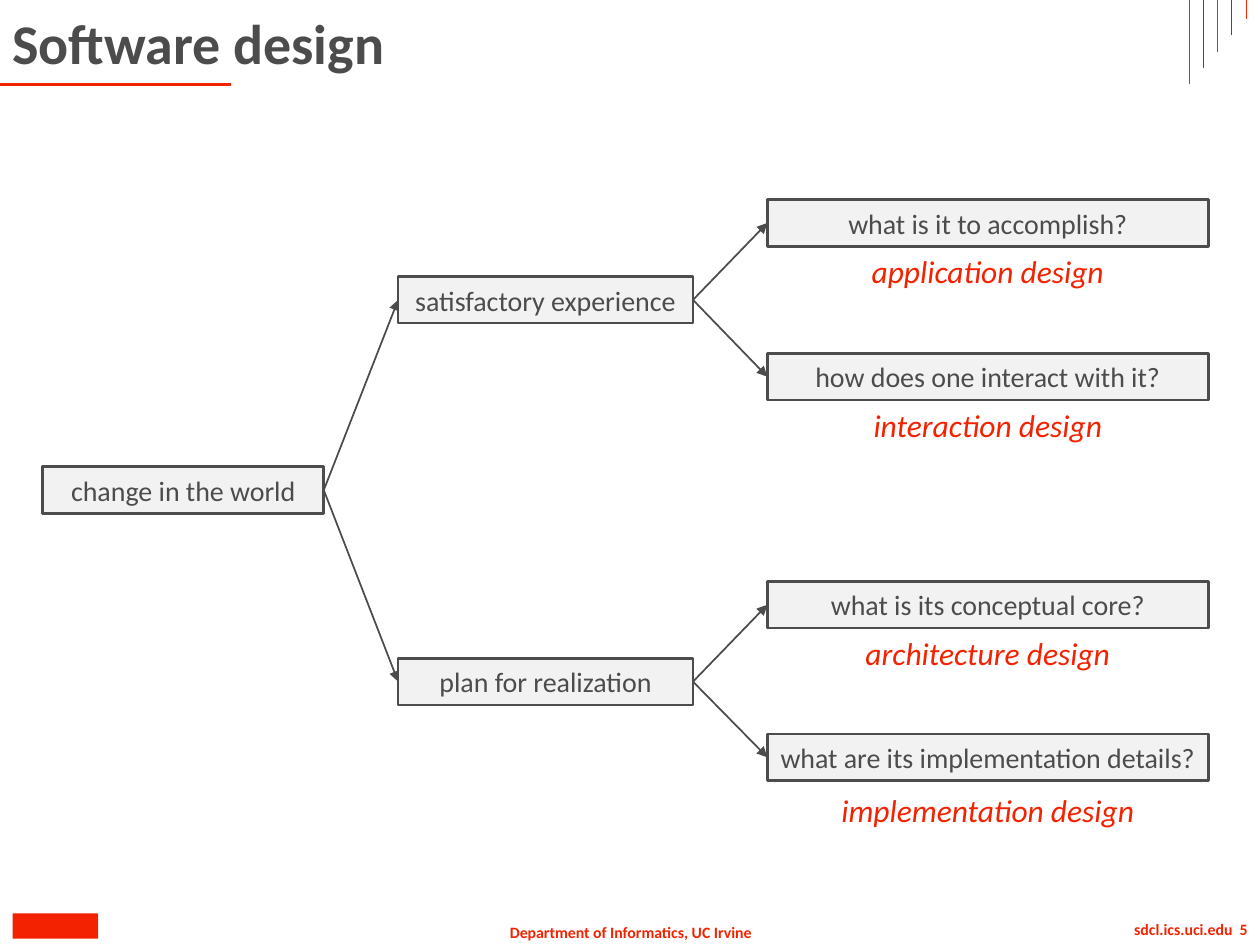
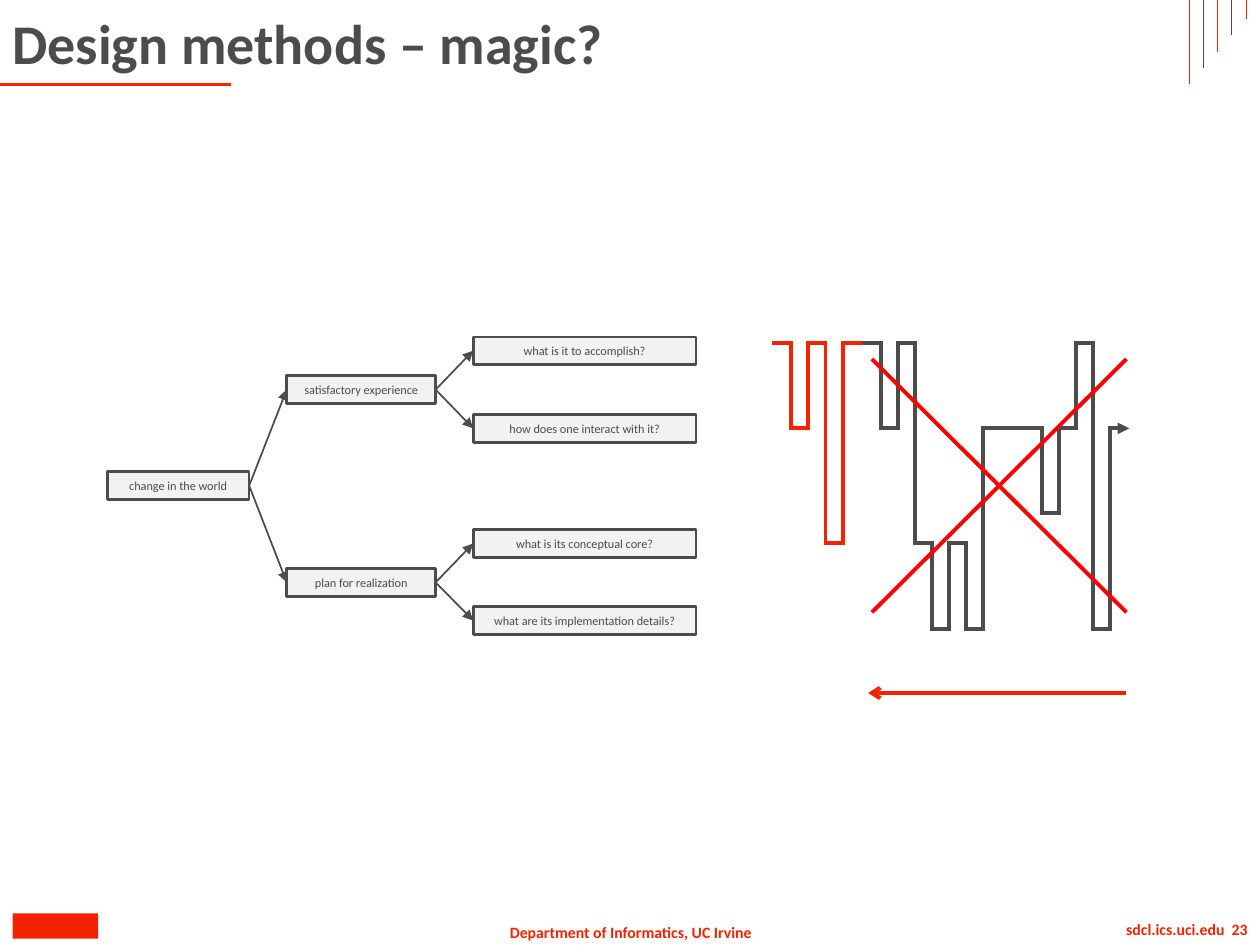
from dataclasses import dataclass

from lxml.etree import SubElement
from pptx import Presentation
from pptx.dml.color import RGBColor
from pptx.enum.shapes import MSO_CONNECTOR as CONN, MSO_SHAPE as SHAPE
from pptx.enum.text import MSO_ANCHOR as ANCHOR, PP_ALIGN as ALIGN
from pptx.oxml.ns import qn
from pptx.util import Inches, Pt


@dataclass(frozen=True)
class Theme:
    font: str = "Calibri"
    accent: RGBColor = RGBColor(0xF3, 0x22, 0x00)
    dark: RGBColor = RGBColor(0x4C, 0x4C, 0x4C)
    box_fill: RGBColor = RGBColor(0xF2, 0xF2, 0xF2)
    cross: RGBColor = RGBColor(0xFF, 0x00, 0x00)
    title_pt: float = 32
    label_pt: float = 18
    tree_pt: float = 16
    small_tree_pt: float = 7
    footer_pt: float = 9
    hairline: float = 0.5
    thin: float = 1
    medium: float = 1.5
    thick: float = 2.25


T = Theme()

TITLES = [("Software design", 5), ("Design methods – magic?", 23)]
DEPARTMENT = "Department of Informatics, UC Irvine"
SITE = "sdcl.ics.uci.edu"
FOOTER_BLOCK = (0.1, 7.25, 0.68, 0.2)

# left and width of each tree column
COLUMNS = [(0.34, 2.23), (3.16, 2.34), (6.09, 3.5)]
# text, centre height, children
TREE = ("change in the world", 3.89, [
    ("satisfactory experience", 2.38, [
        ("what is it to accomplish?", 1.77, []),
        ("how does one interact with it?", 2.99, []),
    ]),
    ("plan for realization", 5.41, [
        ("what is its conceptual core?", 4.8, []),
        ("what are its implementation details?", 6.01, []),
    ]),
])
# text, top, width
KINDS_OF_DESIGN = [
    ("application design", 1.95, 2.06),
    ("interaction design", 3.17, 2.04),
    ("architecture design", 4.98, 2.17),
    ("implementation design", 6.23, 2.58),
]

LEVELS = {"top": 2.72, "mid": 3.4, "low": 4.07, "deep": 4.31, "floor": 4.99}
PATH_START = 6.13
EARLY_PATH = "top mid top deep top".split()
LATER_PATH = ("top mid top deep floor deep floor mid mid mid "
              "low mid top floor mid").split()
CROSS = [((6.92, 2.85), (8.94, 4.86)), ((6.92, 4.86), (8.94, 2.85))]
BACK_ARROW = ((8.94, 5.5), (6.89, 5.5))


def style(p, size, color, align=ALIGN.LEFT, bold=False, italic=False):
    p.alignment = align
    f = p.font
    f.name, f.size, f.bold, f.italic = T.font, Pt(size), bold, italic
    f.color.rgb = color


def add_text(s, text, x, y, w, h, size, color, align=ALIGN.LEFT,
             anchor=ANCHOR.TOP, wrap=False, **look):
    tf = s.shapes.add_textbox(*map(Inches, (x, y, w, h))).text_frame
    tf.word_wrap = wrap
    tf.vertical_anchor = anchor
    p = tf.paragraphs[0]
    p.text = text
    style(p, size, color, align, **look)
    return p


def add_line(s, start, end, color, width, arrow=None):
    """Draw a straight line; arrow names the head at its end."""
    c = s.shapes.add_connector(CONN.STRAIGHT, *map(Inches, (*start, *end)))
    c.line.color.rgb = color
    c.line.width = Pt(width)
    props = c._element.spPr
    if arrow:
        SubElement(props.find(qn("a:ln")), qn("a:tailEnd"), type=arrow)
    SubElement(props, qn("a:effectLst"))


def add_rect(s, x, y, w, h, fill):
    sp = s.shapes.add_shape(SHAPE.RECTANGLE, *map(Inches, (x, y, w, h)))
    sp.shadow.inherit = False
    sp.fill.solid()
    sp.fill.fore_color.rgb = fill
    sp.line.fill.background()
    return sp


def add_box(s, text, x, y, w, h, size):
    """Add an outlined box with centred text."""
    sp = add_rect(s, x, y, w, h, T.box_fill)
    sp.line.color.rgb = T.dark
    sp.line.width = Pt(T.medium)
    tf = sp.text_frame
    tf.word_wrap = True
    tf.vertical_anchor = ANCHOR.MIDDLE
    p = tf.paragraphs[0]
    p.text = text
    style(p, size, T.dark, ALIGN.CENTER)


def add_page(prs, title, number):
    """Add a slide with the shared title, rules and footer."""
    s = prs.slides.add_slide(prs.slide_layouts[6])
    add_rect(s, *FOOTER_BLOCK, T.accent)
    add_text(s, DEPARTMENT, 3.93, 7.27, 2.15, 0.25, T.footer_pt, T.accent,
             ALIGN.CENTER, bold=True)
    p = add_text(s, SITE, 7.84, 7.25, 2.16, 0.25, T.footer_pt, T.accent,
                 ALIGN.RIGHT, wrap=True, bold=True)
    gap = p.add_run()
    gap.text = " "
    gap._r.get_or_add_rPr().set("spc", "200")
    p.add_run().text = str(number)

    add_line(s, (0, 0.67), (1.83, 0.67), T.accent, T.medium)
    for i in range(5):
        x = 9.44 + i * 0.45 / 4
        color = T.dark if i % 2 else T.accent
        add_line(s, (x, 0.67 - 0.13 * i), (x, 0), color, T.hairline)
    add_text(s, title, 0, 0, 9, 0.67, T.title_pt, T.dark,
             anchor=ANCHOR.MIDDLE, wrap=True, bold=True)
    return s


def draw_tree(s, node, size, box_h, scale=1.0, dx=0.0, dy=0.0, depth=0):
    """Draw a node and its descendants, scaled and then moved by dx, dy."""
    text, mid, children = node
    left, width = COLUMNS[depth]
    x, y, w = dx + scale * left, dy + scale * mid, scale * width
    for child in children:
        end = dx + scale * COLUMNS[depth + 1][0], dy + scale * child[1]
        add_line(s, (x + w, y), end, T.dark, T.thin, "triangle")
        draw_tree(s, child, size, box_h, scale, dx, dy, depth + 1)
    add_box(s, text, x, y - box_h / 2, w, box_h, size)


def draw_path(s):
    """Draw the square wave; runs overlap by one stroke where the level changes."""
    run, stroke = 1 / 6, T.thick / 72
    steps = [(n, T.accent) for n in EARLY_PATH] + [(n, T.dark) for n in LATER_PATH]
    x = PATH_START
    for i, (name, color) in enumerate(steps):
        y = LEVELS[name]
        last = i == len(steps) - 1
        add_line(s, (x, y), (x + run, y), color, T.thick, "triangle" if last else None)
        if last:
            break
        next_y = LEVELS[steps[i + 1][0]]
        x += run
        if next_y != y:
            x -= stroke
            riser = x + stroke / 2
            add_line(s, (riser, min(y, next_y)), (riser, max(y, next_y)), color, T.thick)


def main():
    prs = Presentation()
    prs.slide_width, prs.slide_height = Inches(10), Inches(7.5)
    design, magic = [add_page(prs, *page) for page in TITLES]

    draw_tree(design, TREE, T.tree_pt, box_h=0.37)
    left, width = COLUMNS[-1]
    for text, top, w in KINDS_OF_DESIGN:
        add_text(design, text, left + (width - w) / 2, top, w, 0.4,
                 T.label_pt, T.accent, ALIGN.CENTER, italic=True)

    draw_tree(magic, TREE, T.small_tree_pt, box_h=0.22, scale=0.505, dx=0.68, dy=1.89)
    draw_path(magic)
    add_line(magic, *BACK_ARROW, T.accent, T.thick, "arrow")
    for start, end in CROSS:
        add_line(magic, start, end, T.cross, T.thick)

    prs.save("out.pptx")


if __name__ == "__main__":
    main()
